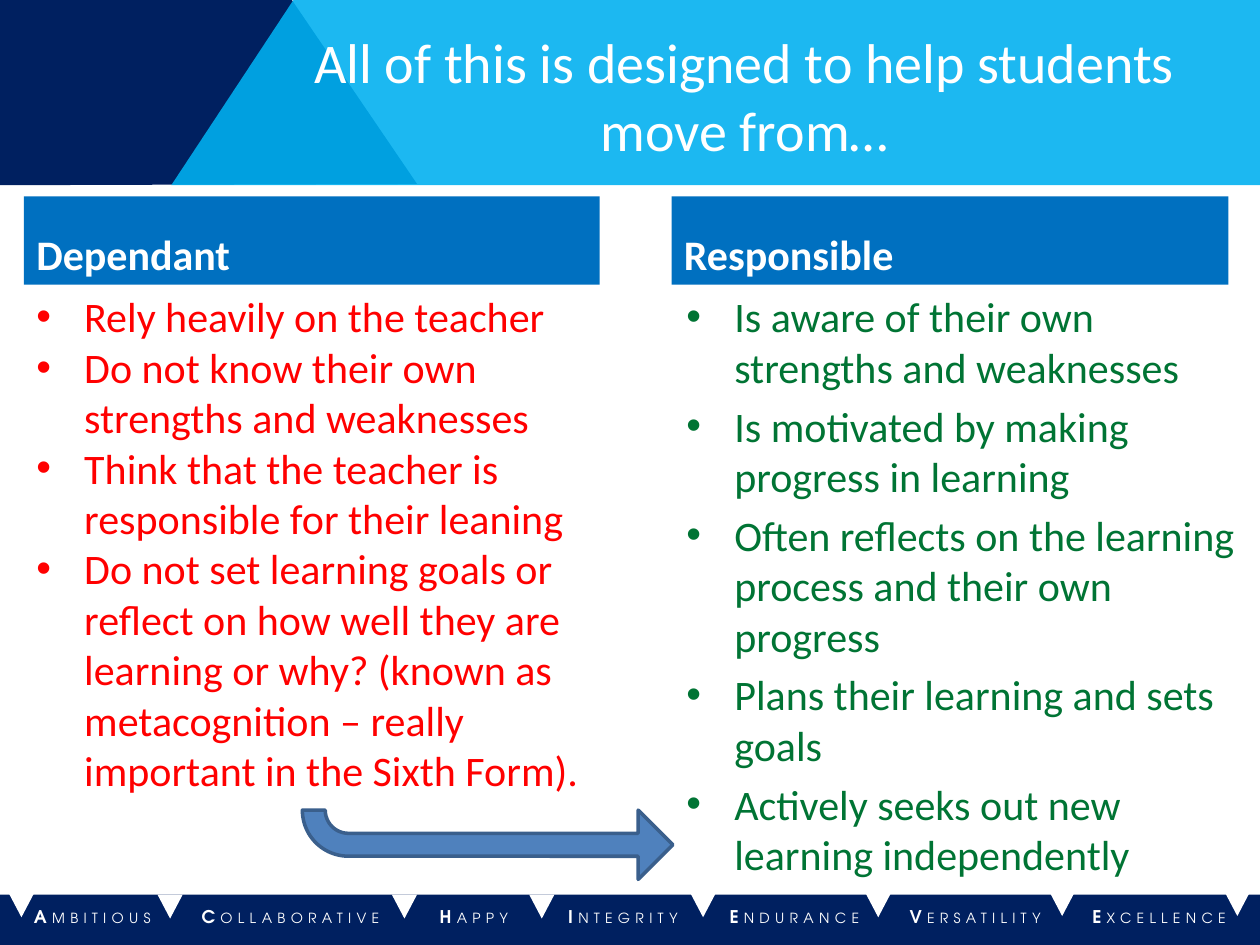
from dataclasses import dataclass

from lxml.etree import SubElement
from pptx import Presentation
from pptx.dml.color import RGBColor as RGB
from pptx.enum.shapes import MSO_SHAPE as Preset
from pptx.enum.text import MSO_ANCHOR as Anchor, PP_ALIGN as Align
from pptx.oxml.ns import qn
from pptx.util import Inches, Pt


@dataclass(frozen=True)
class Theme:
    navy: str = "002060"
    sky: str = "00B0F0"
    blue: str = "0070C0"
    steel: str = "4F81BD"
    steel_edge: str = "3A5F8C"
    white: str = "FFFFFF"
    red: str = "FF0000"
    green: str = "007434"
    body_font: str = "Calibri"
    footer_font: str = "TeX Gyre Adventor"
    title_size: float = 32
    body_size: float = 24
    initial_size: float = 10
    footer_size: float = 8


def apply(target, values):
    for name, value in values.items():
        setattr(target, name, value)


class SlideBuilder:
    def __init__(self, slide, theme):
        self.slide = slide
        self.theme = theme

    def paint(self, shape, fill, edge=None, opacity=None):
        shape.shadow.inherit = False
        shape.fill.solid()
        shape.fill.fore_color.rgb = RGB.from_string(fill)
        if opacity:
            color = shape.fill._xPr.find(qn("a:solidFill"))[0]
            SubElement(color, qn("a:alpha"), val=str(opacity * 1000))
        if edge:
            shape.line.color.rgb = RGB.from_string(edge)
            shape.line.width = Pt(2)
        else:
            shape.line.fill.background()
        return shape

    def outline(self, points, fill, opacity=None):
        start, *rest = [(Inches(x), Inches(y)) for x, y in points]
        builder = self.slide.shapes.build_freeform(*start)
        builder.add_line_segments(rest, close=True)
        return self.paint(builder.convert_to_shape(), fill, opacity=opacity)

    def preset(self, kind, box, fill, edge=None):
        shape = self.slide.shapes.add_shape(kind, *map(Inches, box))
        return self.paint(shape, fill, edge)

    def text_box(self, box, **frame_values):
        frame = self.slide.shapes.add_textbox(*map(Inches, box)).text_frame
        apply(frame, {"word_wrap": True, **frame_values})
        return frame

    def run(self, paragraph, text, size, color, font=None, bold=False):
        run = paragraph.add_run()
        run.text = text
        apply(run.font, {"name": font or self.theme.body_font,
                         "size": Pt(size), "bold": bold})
        run.font.color.rgb = RGB.from_string(color)
        return run

    def title(self, text, box):
        frame = self.text_box(box, vertical_anchor=Anchor.MIDDLE)
        frame.paragraphs[0].alignment = Align.CENTER
        self.run(frame.paragraphs[0], text, self.theme.title_size, self.theme.white)

    def heading(self, text, box):
        frame = self.preset(Preset.RECTANGLE, box, self.theme.blue).text_frame
        apply(frame, {"word_wrap": True, "vertical_anchor": Anchor.BOTTOM})
        frame.paragraphs[0].alignment = Align.LEFT
        self.run(frame.paragraphs[0], text, self.theme.body_size,
                 self.theme.white, bold=True)

    def bullets(self, items, box, color, gap=0):
        frame = self.text_box(box)
        indent = Inches(0.38)
        for index, item in enumerate(items):
            paragraph = frame.add_paragraph() if index else frame.paragraphs[0]
            properties = paragraph._p.get_or_add_pPr()
            properties.set("marL", str(indent))
            properties.set("indent", str(-indent))
            SubElement(properties, qn("a:buFont"), typeface="Arial")
            SubElement(properties, qn("a:buChar"), char="•")
            paragraph.space_before = Pt(gap if index else 0)
            self.run(paragraph, item, self.theme.body_size, color)

    def footer(self, words, starts, box):
        margin = starts[0]
        frame = self.text_box(box, margin_left=Inches(margin), margin_right=0)
        paragraph = frame.paragraphs[0]
        paragraph.alignment = Align.LEFT
        tabs = SubElement(paragraph._p.get_or_add_pPr(), qn("a:tabLst"))
        for start in starts[1:]:
            SubElement(tabs, qn("a:tab"), pos=str(Inches(start - margin)), algn="l")
        for index, word in enumerate(words):
            tab = "\t" if index < len(words) - 1 else ""
            for text, size, bold in (
                (word[0], self.theme.initial_size, True),
                (word[1:] + tab, self.theme.footer_size, False),
            ):
                run = self.run(paragraph, text, size, self.theme.white,
                               self.theme.footer_font, bold)
                run.font._element.set("spc", "300")

    def notch(self, left, top):
        triangle = self.preset(Preset.ISOSCELES_TRIANGLE,
                               (left, top, 0.2, 0.19), self.theme.white)
        triangle.rotation = 180

    def bent_arrow(self, box, adjustments):
        arrow = self.preset(Preset.BENT_ARROW, box,
                            self.theme.steel, self.theme.steel_edge)
        for index, value in enumerate(adjustments):
            arrow.adjustments[index] = value
        arrow._element.spPr.find(qn("a:xfrm")).set("flipV", "1")


def main():
    deck = Presentation()
    apply(deck, {"slide_width": Inches(10), "slide_height": Inches(7.5)})
    theme = Theme()
    page = SlideBuilder(deck.slides.add_slide(deck.slide_layouts[6]), theme)

    page.outline([(-0.04, 1.47), (-0.04, 0), (2.31, -0.01), (3.31, 1.46)], theme.navy)
    page.outline([(1.36, 1.47), (2.33, 0), (10, 0), (10, 1.47)], theme.sky, opacity=89)

    page.preset(Preset.RECTANGLE, (0, 7.1, 10, 0.4), theme.navy)
    values = ("AMBITIOUS", "COLLABORATIVE", "HAPPY", "INTEGRITY",
              "ENDURANCE", "VERSATILITY", "EXCELLENCE")
    page.footer(values, (0.27, 1.6, 3.49, 4.51, 5.79, 7.22, 8.67),
                (0, 7.14, 10, 0.35))
    for left, top in ((1.25, 7.1), (3.11, 7.1), (4.2, 7.1), (5.48, 7.09),
                      (6.87, 7.09), (8.33, 7.08), (9.72, 7.08), (0.07, 7.09)):
        page.notch(left, top)

    page.title("All of this is designed to help students move from…",
               (2.32, 0.13, 7.18, 1.25))

    page.heading("Responsible", (5.33, 1.56, 4.42, 0.7))
    page.bullets((
        "Is aware of their own strengths and weaknesses",
        "Is motivated by making progress in learning",
        "Often reflects on the learning process and their own progress",
        "Plans their learning and sets goals",
        "Actively seeks out new learning independently",
    ), (5.35, 2.26, 4.56, 4.92), theme.green, gap=4.8)

    page.heading("Dependant", (0.19, 1.56, 4.57, 0.7))
    page.bullets((
        "Rely heavily on the teacher",
        "Do not know their own strengths and weaknesses",
        "Think that the teacher is responsible for their leaning",
        "Do not set learning goals or reflect on how well they are learning or why? "
        "(known as metacognition – really important in the Sixth Form).",
    ), (0.19, 2.26, 4.92, 4.92), theme.red)

    page.bent_arrow((2.4, 6.43, 2.94, 0.55), (0.33, 0.5, 0.5, 0.71))
    deck.save("out.pptx")


if __name__ == "__main__":
    main()
